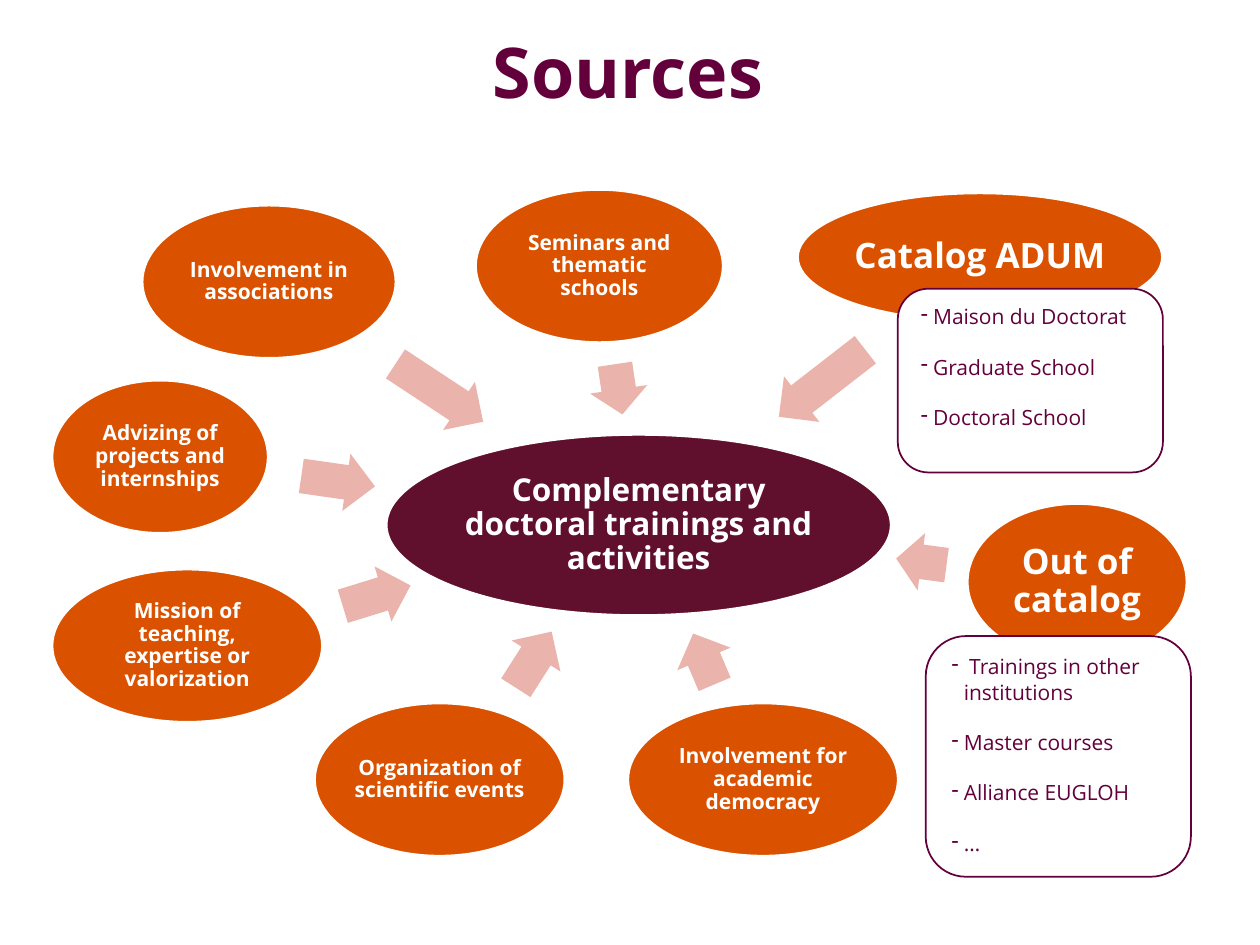
from lxml import etree
from pptx import Presentation
from pptx import util as u
from pptx.dml import color
from pptx.enum import shapes, text
from pptx.oxml import ns

COLOURS = {"plum": "63003C", "core": "600F2D", "source": "DA5200",
           "arrow": "EAB3AB", "white": "FFFFFF"}
FONT = "Open Sans"
SOURCE_HEIGHT = 87
ARROW_HEIGHT = 33
LINE_HEIGHT = 14.4

CORE = ("Complementary doctoral trainings and activities", (221, 248.5, 288, 103), 18)
SOURCES = [
    ("Seminars and thematic schools", (272, 108.5, 141, SOURCE_HEIGHT), 12,
     (339, 206, 29), 81.5),
    ("Catalog ADUM", (456, 110.5, 208, 73), 20, (438.5, 202.5, 62.5), 142.2),
    ("Out of catalog", (553, 288, 125, 89), 20, (512, 304.5, 29), 187.5),
    ("Involvement for academic democracy", (359, 402, 154, SOURCE_HEIGHT), 12,
     (386.5, 360, 31.5), 247),
    ("Organization of scientific events", (180, 402, 142.5, SOURCE_HEIGHT), 12,
     (286, 360.5, 38), 302.5),
    ("Mission of teaching, expertise or valorization", (30, 325.5, 154, SOURCE_HEIGHT), 12,
     (195, 324, 40.5), 342.9),
    ("Advizing of projects and internships", (30, 217.5, 123, SOURCE_HEIGHT), 12,
     (172, 258.5, 42.5), 8.1),
    ("Involvement in associations", (81.5, 117.5, 144.5, SOURCE_HEIGHT), 12,
     (221, 208, 60), 33.4),
]
DETAILS = [
    ((513, 165, 151.5, 105), ["Maison du Doctorat", "Graduate School", "Doctoral School"]),
    ((529, 363.5, 151.5, 137.5),
     [" Trainings in other institutions", "Master courses", "Alliance EUGLOH", "…"]),
]


def rgb(name):
    return color.RGBColor.from_string(COLOURS[name])


def apply(target, values):
    for name, value in values.items():
        setattr(target, name, value)


def write(paragraph, wording, size, colour, bold):
    run = paragraph.add_run()
    run.text = wording
    apply(run.font, {"name": FONT, "size": u.Pt(size), "bold": bold})
    run.font.color.rgb = rgb(colour)


def add_figure(slide, preset, place, fill, outline=None):
    figure = slide.shapes.add_shape(preset, *map(u.Pt, place))
    figure.shadow.inherit = False
    figure.fill.solid()
    figure.fill.fore_color.rgb = rgb(fill)
    if outline:
        figure.line.color.rgb = rgb(outline)
        figure.line.width = u.Pt(1)
    else:
        figure.line.fill.background()
    return figure


def add_title(slide, wording):
    title = slide.shapes.title
    apply(title, {"left": u.Pt(11), "top": u.Pt(14.5),
                  "width": u.Pt(695.5), "height": u.Pt(58)})
    apply(title.text_frame, {"vertical_anchor": text.MSO_ANCHOR.MIDDLE,
                             "word_wrap": True, "auto_size": text.MSO_AUTO_SIZE.NONE})
    paragraph = title.text_frame.paragraphs[0]
    apply(paragraph, {"alignment": text.PP_ALIGN.CENTER, "line_spacing": 0.9})
    write(paragraph, wording, 40, "plum", True)


def add_bubble(slide, wording, place, size, fill):
    bubble = add_figure(slide, shapes.MSO_SHAPE.OVAL, place, fill, "white")
    frame = bubble.text_frame
    apply(frame, {"vertical_anchor": text.MSO_ANCHOR.MIDDLE, "word_wrap": True})
    apply(frame, {f"margin_{side}": u.Pt(1.5) for side in ("left", "top", "right", "bottom")})
    paragraph = frame.paragraphs[0]
    apply(paragraph, {"alignment": text.PP_ALIGN.CENTER, "line_spacing": 0.9})
    write(paragraph, wording, size, "white", True)


def add_arrow(slide, place, angle):
    arrow = add_figure(slide, shapes.MSO_SHAPE.RIGHT_ARROW, (*place, ARROW_HEIGHT), "arrow")
    arrow.adjustments[0] = 0.6
    arrow.adjustments[1] = 0.5
    arrow.rotation = angle


def add_dash(paragraph):
    properties = paragraph._p.get_or_add_pPr()
    properties.set("marL", str(u.Pt(8)))
    properties.set("indent", str(u.Pt(-7)))
    etree.SubElement(properties, ns.qn("a:buChar")).set("char", "-")


def add_details(slide, place, items):
    panel = add_figure(slide, shapes.MSO_SHAPE.ROUNDED_RECTANGLE, place, "white", "plum")
    frame = panel.text_frame
    apply(frame, {"vertical_anchor": text.MSO_ANCHOR.TOP, "word_wrap": True})
    for index, item in enumerate(items):
        paragraph = frame.add_paragraph() if index else frame.paragraphs[0]
        add_dash(paragraph)
        paragraph.alignment = text.PP_ALIGN.LEFT
        if index:
            paragraph.space_before = u.Pt(LINE_HEIGHT)
        write(paragraph, item, 12, "plum", False)


def main():
    deck = Presentation()
    apply(deck, {"slide_width": u.Pt(720), "slide_height": u.Pt(540)})
    slide = deck.slides.add_slide(deck.slide_layouts[5])
    add_title(slide, "Sources")
    add_bubble(slide, *CORE, "core")
    for wording, place, size, arrow_place, angle in SOURCES:
        add_arrow(slide, arrow_place, angle)
        add_bubble(slide, wording, place, size, "source")
    for place, items in DETAILS:
        add_details(slide, place, items)
    deck.save("out.pptx")


if __name__ == "__main__":
    main()
